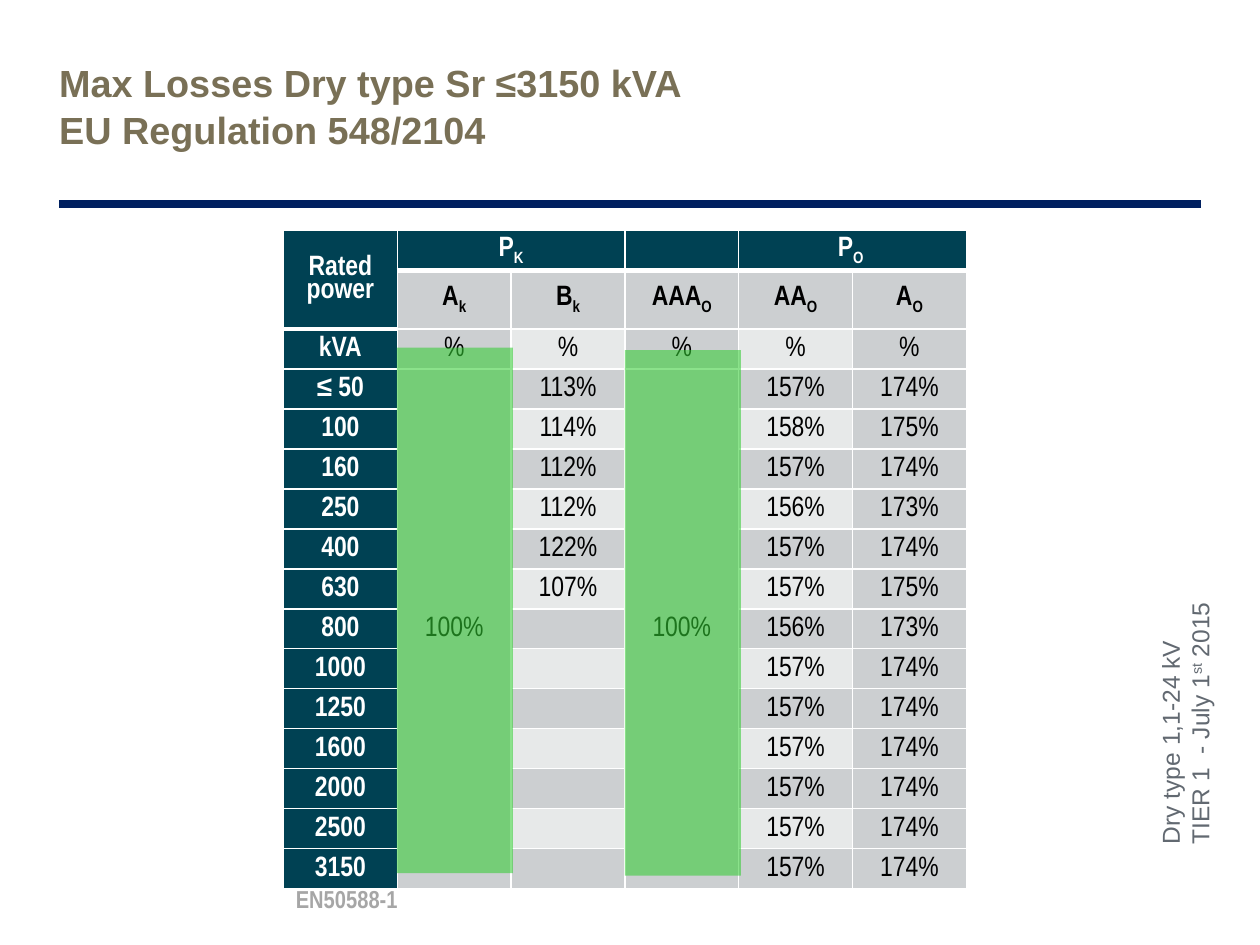
"""Build the slide of maximum losses for dry type transformers."""
from lxml import etree
from pptx import Presentation
from pptx.dml.color import RGBColor
from pptx.enum import shapes, text
from pptx.oxml import ns
from pptx.util import Inches, Pt

COLORS = {
    "title": "797056", "rule": "002060", "head": "004153", "dark": "CCCFD1",
    "light": "E7E9E9", "white": "FFFFFF", "black": "000000",
    "side": "626971", "source": "A6A6A6", "highlight": "33CC33",
}
SUB, SUPER = -25000, 30000
UNIT_ROW, FIRST_DATA_ROW = 2, 3
CLASSES = [("A", "k"), ("B", "k"), ("AAA", "O"), ("AA", "O"), ("A", "O")]
LOSSES = [
    ("≤ 50", "113%", "157%", "174%"),
    ("100", "114%", "158%", "175%"),
    ("160", "112%", "157%", "174%"),
    ("250", "112%", "156%", "173%"),
    ("400", "122%", "157%", "174%"),
    ("630", "107%", "157%", "175%"),
    ("800", "", "156%", "173%"),
    ("1000", "", "157%", "174%"),
    ("1250", "", "157%", "174%"),
    ("1600", "", "157%", "174%"),
    ("2000", "", "157%", "174%"),
    ("2500", "", "157%", "174%"),
    ("3150", "", "157%", "174%"),
]


def rgb(name):
    return RGBColor.from_string(COLORS[name])


def write(p, pieces, size, face, color, bold=False):
    """Fill a paragraph with (text, baseline) pieces in one font."""
    for content, baseline in pieces:
        for i, line in enumerate(content.split("\n")):
            if i:
                p.add_line_break()
            r = p.add_run()
            r.text = line
            if baseline:
                r._r.get_or_add_rPr().set("baseline", str(baseline))
    p.font.size, p.font.name, p.font.bold = Pt(size), face, bold
    p.font.color.rgb = rgb(color)


def add_text(s, box, pieces, size, face, color, bold=False, inset=True):
    sp = s.shapes.add_textbox(*map(Inches, box))
    tf = sp.text_frame
    tf.word_wrap = True
    if not inset:
        tf.margin_left = tf.margin_right = tf.margin_top = tf.margin_bottom = 0
    write(tf.paragraphs[0], pieces, size, face, color, bold)
    return sp


def add_rule(s):
    line = s.shapes.add_connector(
        shapes.MSO_CONNECTOR.STRAIGHT,
        Inches(0.47), Inches(1.62), Inches(9.53), Inches(1.62))
    line.line.color.rgb = rgb("rule")
    line.line.width = Pt(5)
    etree.SubElement(line._element.spPr, ns.qn("a:effectLst"))


def add_highlight(s, left, top):
    sp = s.shapes.add_shape(
        shapes.MSO_SHAPE.RECTANGLE,
        Inches(left), Inches(top), Inches(0.92), Inches(4.17))
    sp.shadow.inherit = False
    sp.line.fill.background()
    sp.fill.solid()
    sp.fill.fore_color.rgb = rgb("highlight")
    color = sp.fill._xPr.find(".//" + ns.qn("a:srgbClr"))
    etree.SubElement(color, ns.qn("a:alpha")).set("val", "57000")


def set_borders(cell, top=1, bottom=1):
    tcPr = cell._tc.get_or_add_tcPr()
    for side, width in (("L", 1), ("R", 1), ("T", top), ("B", bottom)):
        ln = etree.SubElement(tcPr, ns.qn("a:ln" + side), w=str(Pt(width)))
        fill = etree.SubElement(ln, ns.qn("a:solidFill"))
        etree.SubElement(fill, ns.qn("a:srgbClr"), val=COLORS["white"])


def cell_fill(row, col):
    if row == 0 or col == 0:
        return "head"
    return "light" if row >= UNIT_ROW and row % 2 == 0 and col in (2, 4) else "dark"


def format_cell(cell, row, col):
    set_borders(cell, top=3 if row == 1 or (row, col) == (2, 0) else 1,
                bottom=3 if row == 0 or (row, col) == (1, 0) else 1)
    cell.fill.solid()
    cell.fill.fore_color.rgb = rgb(cell_fill(row, col))
    cell.vertical_anchor = text.MSO_ANCHOR.MIDDLE
    cell.margin_left = cell.margin_right = cell.margin_top = Inches(0.01)
    cell.margin_bottom = 0


def table_rows():
    """Return the table content, row by row, as lists of text pieces."""
    rows = [
        [[("Rated power", 0)], [("P", 0), ("K", SUB)], [], [],
         [("P", 0), ("O ", SUB)], []],
        [[]] + [[(name, 0), (sub, SUB)] for name, sub in CLASSES],
        [[("kVA", 0)]] + [[("%", 0)]] * 5,
    ]
    for i, (power, bk, aao, ao) in enumerate(LOSSES):
        full = "" if i else "100%"
        rows.append([[(v, 0)] if v else []
                     for v in (power, full, bk, full, aao, ao)])
    return rows


def add_losses_table(s):
    rows = table_rows()
    height = 5.08 / len(rows)
    table = s.shapes.add_table(len(rows), 6, Inches(2.25), Inches(1.83),
                               Inches(5.42), Inches(5.08)).table
    table.first_row = table.horz_banding = False
    for column in table.columns:
        column.width = Inches(5.42 / 6)
    for i, row in enumerate(table.rows):
        row.height = Inches(0.43 if i == 1 else height)
    for i, row in enumerate(rows):
        for j, pieces in enumerate(row):
            cell = table.cell(i, j)
            format_cell(cell, i, j)
            p = cell.text_frame.paragraphs[0]
            p.alignment = text.PP_ALIGN.CENTER
            color = "white" if cell_fill(i, j) == "head" else "black"
            write(p, pieces, 16, "Arial Narrow", color,
                  bold=i < UNIT_ROW or j == 0)
    table.cell(0, 0).text_frame.paragraphs[0].line_spacing = 0.85
    last = len(rows) - 1
    for start, end in (((0, 0), (1, 0)), ((0, 1), (0, 2)), ((0, 4), (0, 5)),
                       ((FIRST_DATA_ROW, 1), (last, 1)),
                       ((FIRST_DATA_ROW, 3), (last, 3))):
        table.cell(*start).merge(table.cell(*end))


def main():
    prs = Presentation()
    prs.slide_width, prs.slide_height = Inches(10), Inches(7.5)
    s = prs.slides.add_slide(prs.slide_layouts[6])
    add_rule(s)
    title = add_text(
        s, (0.47, 0.46, 7.84, 0.93),
        [("Max Losses Dry type Sr ≤3150 kVA\nEU Regulation 548/2104", 0)],
        21.6, "Arial", "title", bold=True, inset=False)
    title.text_frame.paragraphs[0].line_spacing = 1.04
    add_losses_table(s)
    side = add_text(
        s, (7.61, 4.56, 3.7, 0.58),
        [("Dry type 1,1-24 kV\nTIER 1  - July 1", 0), ("st", SUPER), (" 2015", 0)],
        14, "Arial", "side", inset=False)
    side.rotation = 270
    add_text(s, (2.25, 6.97, 2.44, 0.37), [("EN50588-1", 0)],
             14, "Arial Narrow", "source", bold=True)
    add_highlight(s, 3.15, 2.76)
    add_highlight(s, 4.96, 2.78)
    prs.save("out.pptx")


if __name__ == "__main__":
    main()
